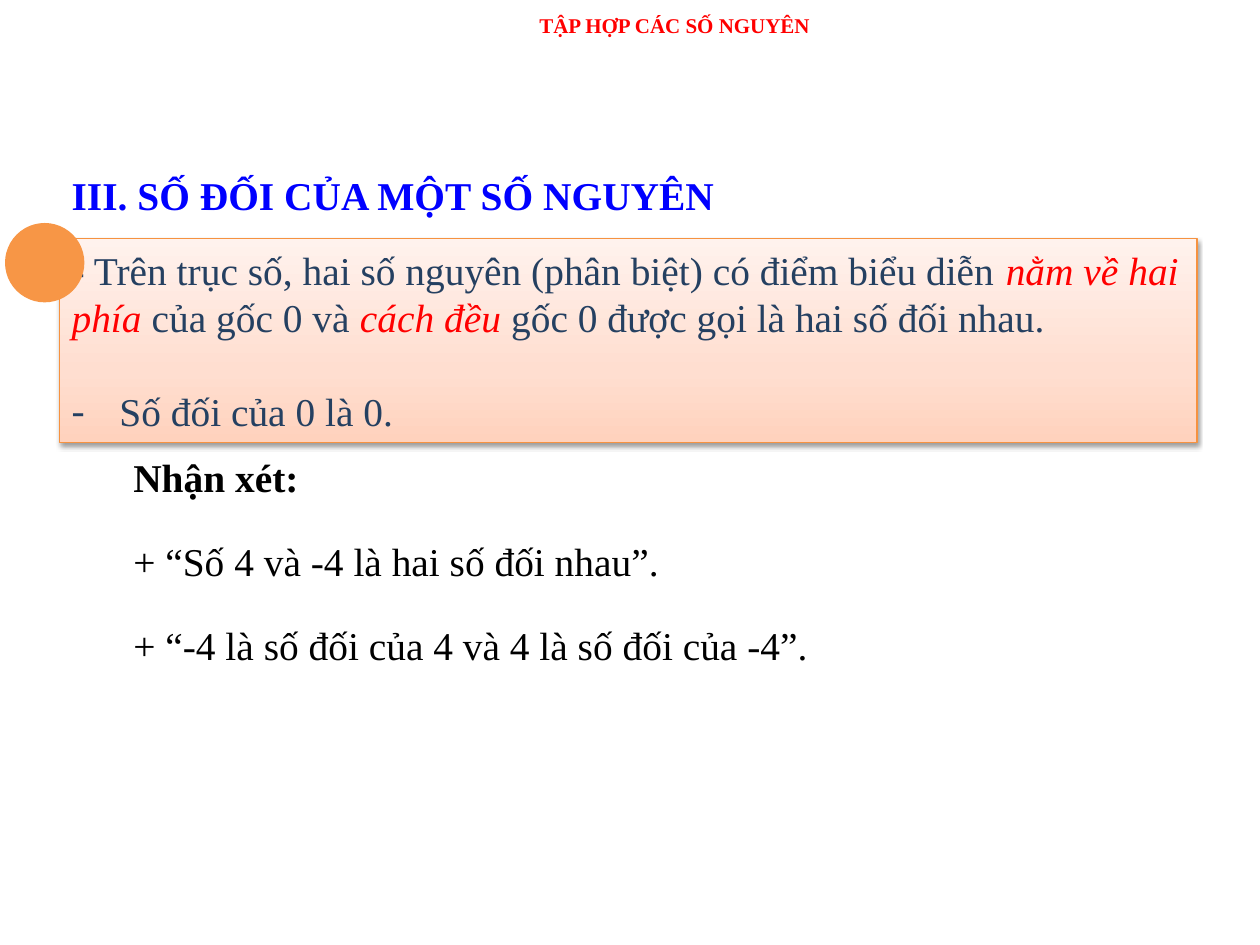
import pptx
import pptx.util
import pptx.dml.color
import pptx.enum.shapes
import pptx.enum.text
import pptx.oxml
import pptx.oxml.ns

FONT = "Times New Roman"
BODY = 22.5
NAVY, RED, BLUE, BLACK, ORANGE = "254061", "FF0000", "0000FF", "000000", "F79646"
NS = pptx.oxml.ns.nsdecls("a")
ALIGN = pptx.enum.text.PP_ALIGN
ANCHOR = pptx.enum.text.MSO_ANCHOR
SHAPE = pptx.enum.shapes.MSO_SHAPE

deck = pptx.Presentation()
deck.slide_width = pptx.util.Inches(10)
deck.slide_height = pptx.util.Inches(7.5)
column = deck.slide_width // 100
row = deck.slide_height // 75
page = deck.slides.add_slide(deck.slide_layouts[6])


def rgb(code):
    return pptx.dml.color.RGBColor.from_string(code)


def add_span(para, text, color, size=BODY, bold=False, italic=False):
    span = para.add_run()
    span.text = text
    span.font.name = FONT
    span.font.size = pptx.util.Pt(size)
    span.font.bold = bold
    span.font.italic = italic
    span.font.color.rgb = rgb(color)


definition = page.shapes.add_shape(
    SHAPE.RECTANGLE, int(4.7 * column), int(18.9 * row), int(90.3 * column), int(16.2 * row)
)
definition.line.color.rgb = rgb("F69240")
definition.line.width = pptx.util.Pt(0.75)
definition.shadow.inherit = False
properties = definition._element.spPr
stops = "".join(
    f'<a:gs pos="{share * 1000}"><a:srgbClr val="{rgb(code)}"/></a:gs>'
    for share, code in [(0, "FFD2BD"), (35, "FFDED0"), (100, "FFF2ED")]
)
properties.find(pptx.oxml.ns.qn("a:prstGeom")).addnext(pptx.oxml.parse_xml(
    f'<a:gradFill {NS} rotWithShape="1"><a:gsLst>{stops}</a:gsLst>'
    '<a:lin ang="16200000" scaled="0"/></a:gradFill>'
))
properties.find(pptx.oxml.ns.qn("a:effectLst")).append(pptx.oxml.parse_xml(
    f'<a:outerShdw {NS} blurRad="{pptx.util.Pt(3.1)}" dist="{pptx.util.Pt(1.6)}" '
    f'dir="5400000" rotWithShape="0"><a:srgbClr val="{rgb(BLACK)}">'
    '<a:alpha val="38000"/></a:srgbClr></a:outerShdw>'
))
frame = definition.text_frame
frame.word_wrap = True
frame.vertical_anchor = ANCHOR.MIDDLE
para = frame.paragraphs[0]
para.alignment = ALIGN.LEFT
for text, stressed in [
    ("- Trên trục số, hai số nguyên (phân biệt) có điểm biểu diễn ", False),
    ("nằm về hai phía", True),
    (" của gốc 0 và ", False),
    ("cách đều ", True),
    ("gốc 0 được gọi là hai số đối nhau.", False),
]:
    add_span(para, text, RED if stressed else NAVY, italic=stressed)
para = frame.add_paragraph()
para.alignment = ALIGN.LEFT
para.space_before = pptx.util.Pt(27)
bullet = para._p.get_or_add_pPr()
bullet.set("marL", str(pptx.util.Inches(0.38)))
bullet.set("indent", str(-pptx.util.Inches(0.38)))
bullet.append(pptx.oxml.parse_xml(f'<a:buFont {NS} typeface="{FONT}"/>'))
bullet.append(pptx.oxml.parse_xml(f'<a:buChar {NS} char="-"/>'))
add_span(para, "Số đối của 0 là 0.", NAVY)

remarks = page.shapes.add_textbox(
    int(9.6 * column), int(33.6 * row), int(64.3 * column), int(20.3 * row)
)
frame = remarks.text_frame
frame.word_wrap = True
for index, text in enumerate([
    "Nhận xét:",
    "+ “Số 4 và -4 là hai số đối nhau”.",
    "+ “-4 là số đối của 4 và 4 là số đối của -4”.",
]):
    para = frame.add_paragraph() if index else frame.paragraphs[0]
    para.alignment = ALIGN.JUSTIFY
    para.line_spacing = 1.5
    para.space_after = pptx.util.Pt(7.5)
    add_span(para, text, BLACK, bold=index == 0)

disc = page.shapes.add_shape(
    SHAPE.OVAL, int(0.4 * column), int(17.7 * row), int(6.3 * column), int(6.3 * row)
)
disc.shadow.inherit = False
disc.fill.solid()
disc.fill.fore_color.rgb = rgb(ORANGE)
disc.line.fill.background()

for text, left, top, width, height, size, color, align, wrap in [
    ("III. SỐ ĐỐI CỦA MỘT SỐ NGUYÊN", 4.7, 13.1, 57.2, 4.8, BODY, BLUE, ALIGN.LEFT, True),
    ("TẬP HỢP CÁC SỐ NGUYÊN", 22.3, 0.5, 62.5, 5, 12, RED, ALIGN.CENTER, False),
]:
    box = page.shapes.add_textbox(
        int(left * column), int(top * row), int(width * column), int(height * row)
    )
    box.text_frame.word_wrap = wrap
    para = box.text_frame.paragraphs[0]
    para.alignment = align
    add_span(para, text, color, size, bold=True)

deck.save("out.pptx")
